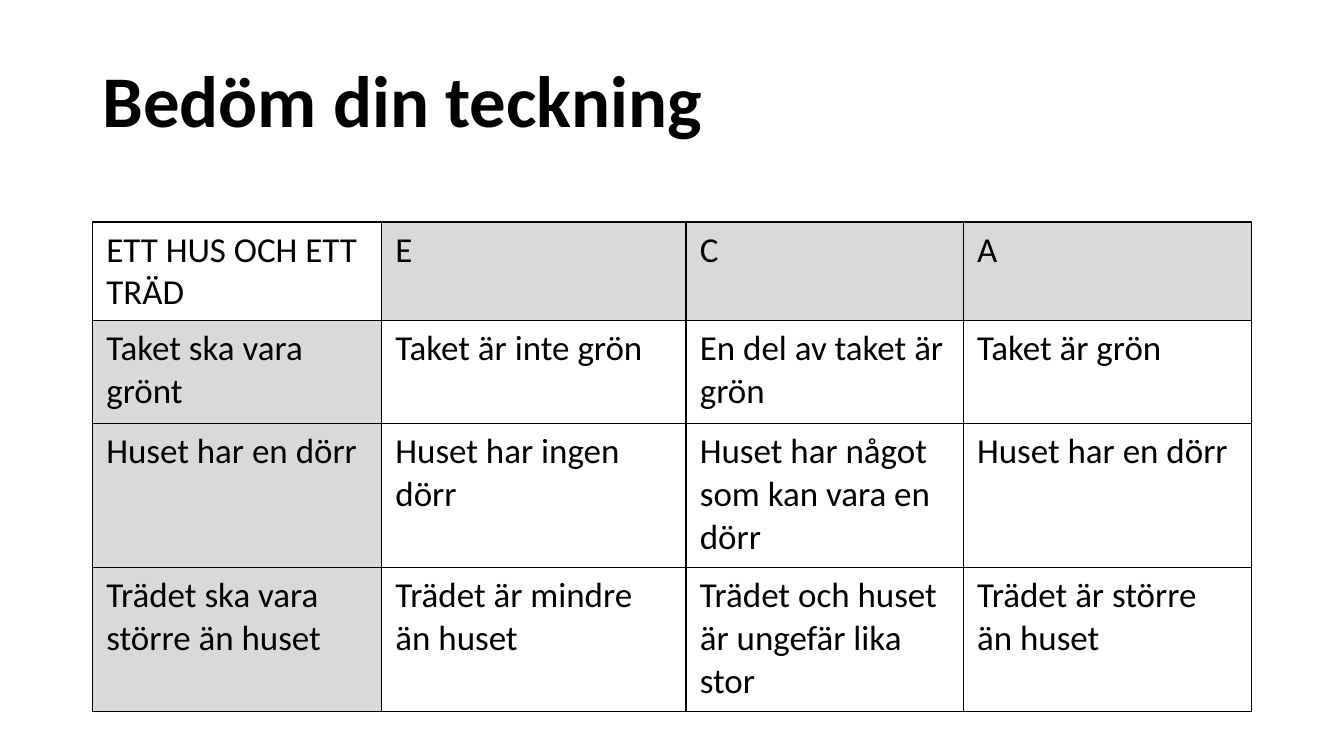
import pptx
import pptx.util
import pptx.dml.color
import pptx.enum.text
import pptx.oxml
import pptx.oxml.ns

Pt = pptx.util.Pt
BLACK = pptx.dml.color.RGBColor(0, 0, 0)
GREY = pptx.dml.color.RGBColor(0xD9, 0xD9, 0xD9)
FONT = "Calibri"
LEFT, WIDTH = 66, 828
COLS = [206.5, 217.5, 198, 206]
ROWS = [70.5, 73.5, 103, 103]
RUBRIC = [
    ["ETT HUS OCH ETT TRÄD", "E", "C", "A"],
    ["Taket ska vara grönt", "Taket är inte grön",
     "En del av taket är grön", "Taket är grön"],
    ["Huset har en dörr", "Huset har ingen dörr",
     "Huset har något som kan vara en dörr", "Huset har en dörr"],
    ["Trädet ska vara större än huset", "Trädet är mindre än huset",
     "Trädet och huset är ungefär lika stor", "Trädet är större än huset"],
]


def style(para, size, bold=False):
    for run in para.runs:
        run.font.name = FONT
        run.font.size = Pt(size)
        run.font.bold = bold
        run.font.color.rgb = BLACK


def add_title(slide, text):
    box = slide.shapes.add_textbox(Pt(LEFT), Pt(14.5), Pt(WIDTH), Pt(119))
    frame = box.text_frame
    frame.word_wrap = True
    frame.vertical_anchor = pptx.enum.text.MSO_ANCHOR.MIDDLE
    para = frame.paragraphs[0]
    para.text = text
    para.line_spacing = 0.9
    para.space_after = Pt(6)
    style(para, 52, True)


def add_border(cell):
    props = cell._tc.get_or_add_tcPr()
    for side in "LRTB":
        props.append(pptx.oxml.parse_xml(
            f'<a:ln{side} {pptx.oxml.ns.nsdecls("a")} w="{Pt(1)}">'
            f'<a:solidFill><a:srgbClr val="{BLACK}"/></a:solidFill>'
            f'</a:ln{side}>'))


def fill_cell(cell, text, shaded):
    cell.text_frame.text = text
    style(cell.text_frame.paragraphs[0], 25)
    cell.margin_left = cell.margin_right = Pt(10)
    cell.margin_top = cell.margin_bottom = Pt(5)
    add_border(cell)
    if shaded:
        cell.fill.solid()
        cell.fill.fore_color.rgb = GREY
    else:
        cell.fill.background()


def add_rubric(slide):
    frame = slide.shapes.add_table(len(ROWS), len(COLS), Pt(LEFT), Pt(158.5),
                                   Pt(WIDTH), Pt(sum(ROWS)))
    table = frame.table
    table.first_row = table.horz_banding = False
    for col, width in zip(table.columns, COLS):
        col.width = Pt(width)
    for row, height in zip(table.rows, ROWS):
        row.height = Pt(height)
    for i, texts in enumerate(RUBRIC):
        for j, text in enumerate(texts):
            fill_cell(table.cell(i, j), text, (i == 0) != (j == 0))


def main():
    deck = pptx.Presentation()
    deck.slide_width, deck.slide_height = Pt(960), Pt(540)
    slide = deck.slides.add_slide(deck.slide_layouts[6])
    add_title(slide, "Bedöm din teckning")
    add_rubric(slide)
    deck.save("out.pptx")


if __name__ == "__main__":
    main()
